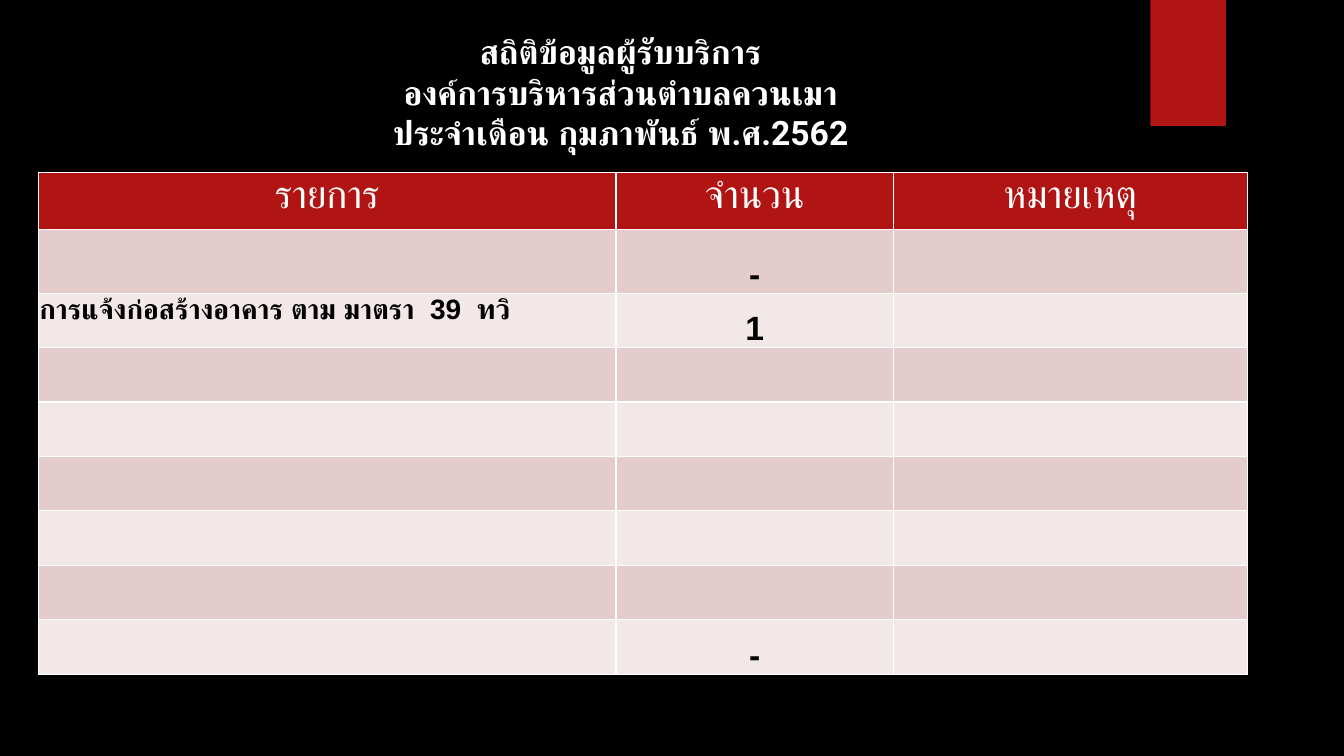
import pptx
import pptx.dml.color
import pptx.enum.shapes
import pptx.enum.text
import pptx.oxml
import pptx.oxml.ns
import pptx.util
from pptx.util import Inches, Pt

RGBColor = pptx.dml.color.RGBColor
PP_ALIGN = pptx.enum.text.PP_ALIGN
MSO_ANCHOR = pptx.enum.text.MSO_ANCHOR

BLACK = RGBColor(0x00, 0x00, 0x00)
WHITE = RGBColor(0xFF, 0xFF, 0xFF)
RED = RGBColor(0xB0, 0x15, 0x13)
BAND_DARK = RGBColor(0xE4, 0xCC, 0xCC)
BAND_LIGHT = RGBColor(0xF2, 0xE8, 0xE7)

SLIDE_WIDTH, SLIDE_HEIGHT = 13.33, 7.5
COLUMN_WIDTHS = [5.73, 2.75, 3.51]
ROW_HEIGHTS = [0.57, 0.63] + [0.54] * 7

TITLE_LINES = [
    "สถิติข้อมูลผู้รับบริการ",
    "องค์การบริหารส่วนตำบลควนเมา",
    "ประจำเดือน กุมภาพันธ์ พ.ศ.2562",
]
HEADINGS = ["รายการ", "จำนวน", "หมายเหตุ"]
ITEMS = {2: "การแจ้งก่อสร้างอาคาร ตาม มาตรา  39  ทวิ"}
COUNTS = {1: "-", 2: "1", 8: "-"}


def format_text(text_frame, size, font_name, color, bold, alignment):
    for paragraph in text_frame.paragraphs:
        paragraph.alignment = alignment
        for run in paragraph.runs:
            run.font.size = Pt(size)
            run.font.name = font_name
            run.font.bold = bold
            run.font.color.rgb = color


def add_ribbon(slide):
    ribbon = slide.shapes.add_shape(
        pptx.enum.shapes.MSO_SHAPE.RECTANGLE,
        Inches(11.41), 0, Inches(0.75), Inches(SLIDE_HEIGHT / 6))
    ribbon.shadow.inherit = False
    ribbon.fill.solid()
    ribbon.fill.fore_color.rgb = RED
    ribbon.line.fill.background()


def add_title(slide):
    title = slide.shapes.add_textbox(
        Inches(2.73), Inches(0.26), Inches(6.85), Inches(1.31))
    title.text_frame.word_wrap = True
    title.text_frame.text = "\n".join(TITLE_LINES)
    format_text(title.text_frame, 24, "Roboto", WHITE, True, PP_ALIGN.CENTER)


def add_borders(cell):
    properties = cell._tc.get_or_add_tcPr()
    for position, side in enumerate(("lnL", "lnR", "lnT", "lnB")):
        border = pptx.oxml.parse_xml(
            f'<a:{side} {pptx.oxml.ns.nsdecls("a")} w="{Pt(1)}"><a:solidFill>'
            f'<a:srgbClr val="{WHITE}"/></a:solidFill></a:{side}>')
        properties.insert(position, border)


def fill_cell(cell, color):
    cell.fill.solid()
    cell.fill.fore_color.rgb = color
    add_borders(cell)


def write_body_cell(cell, text, size, alignment, anchor):
    cell.margin_left = cell.margin_right = cell.margin_top = Inches(0.01)
    cell.margin_bottom = 0
    cell.vertical_anchor = anchor
    cell.text_frame.text = text
    format_text(cell.text_frame, size, "Arial", BLACK, True, alignment)


def add_statistics_table(slide):
    table = slide.shapes.add_table(
        len(ROW_HEIGHTS), len(COLUMN_WIDTHS), Inches(0.38), Inches(1.71),
        Inches(sum(COLUMN_WIDTHS)), Inches(sum(ROW_HEIGHTS))).table
    for column, width in zip(table.columns, COLUMN_WIDTHS):
        column.width = Inches(width)

    # Row heights and alternating bands below the red heading row
    for index, height in enumerate(ROW_HEIGHTS):
        row = table.rows[index]
        row.height = Inches(height)
        band = BAND_DARK if index % 2 else BAND_LIGHT
        for cell in row.cells:
            fill_cell(cell, band if index else RED)

    # Headings
    for cell, heading in zip(table.rows[0].cells, HEADINGS):
        cell.text_frame.text = heading
        format_text(cell.text_frame, 28, "TeX Gyre Adventor", WHITE, False,
                    PP_ALIGN.CENTER)

    # Services and their counts
    for index, item in ITEMS.items():
        write_body_cell(table.cell(index, 0), item, 20,
                        PP_ALIGN.LEFT, MSO_ANCHOR.TOP)
    for index, count in COUNTS.items():
        write_body_cell(table.cell(index, 1), count, 24,
                        PP_ALIGN.CENTER, MSO_ANCHOR.BOTTOM)


def main():
    presentation = pptx.Presentation()
    presentation.slide_width = Inches(SLIDE_WIDTH)
    presentation.slide_height = Inches(SLIDE_HEIGHT)
    slide = presentation.slides.add_slide(presentation.slide_layouts[6])
    slide.background.fill.solid()
    slide.background.fill.fore_color.rgb = BLACK

    add_ribbon(slide)
    add_title(slide)
    add_statistics_table(slide)
    presentation.save("out.pptx")


if __name__ == "__main__":
    main()
